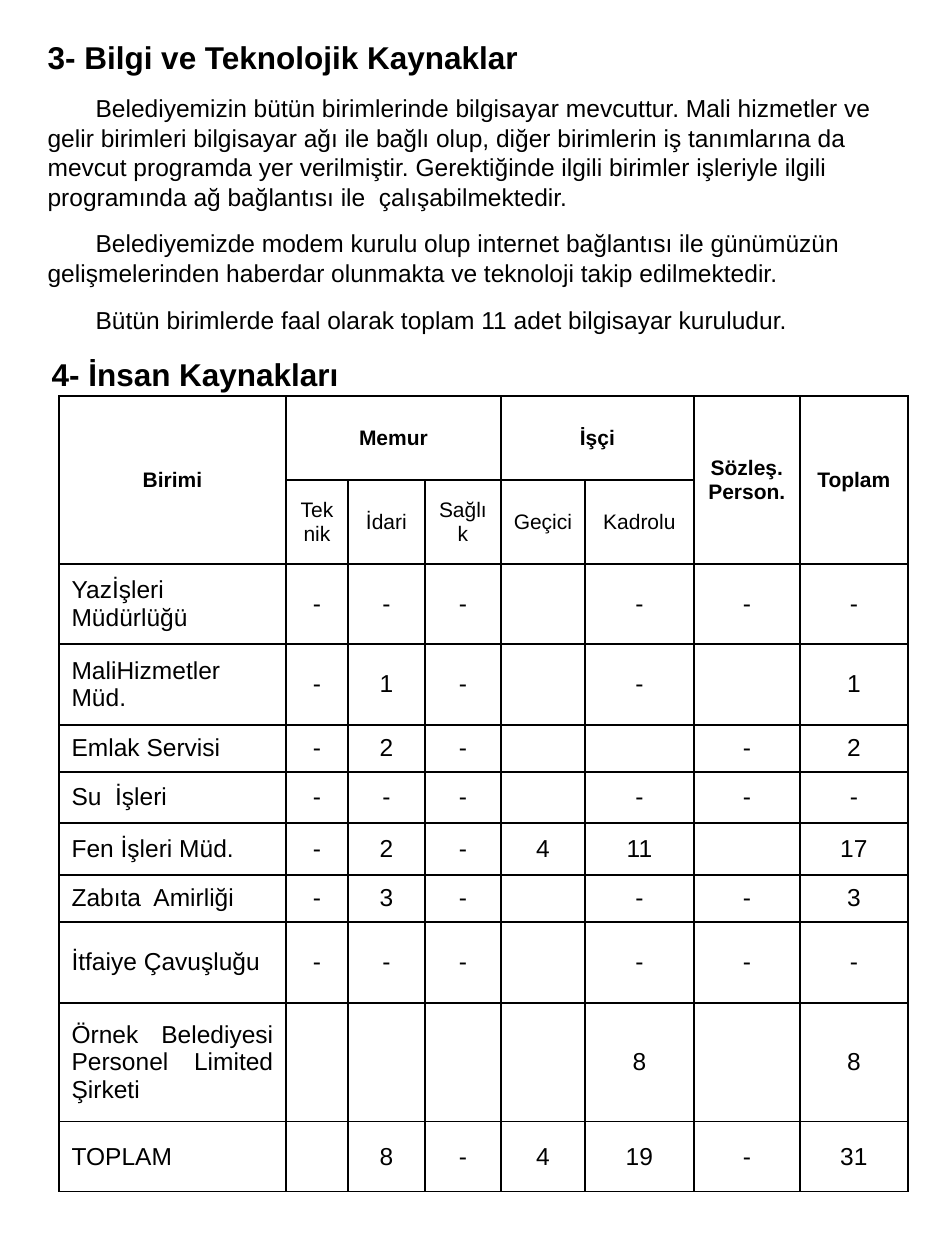
from lxml import etree
from pptx import Presentation
from pptx.dml.color import RGBColor
from pptx.enum.text import MSO_ANCHOR, MSO_AUTO_SIZE, PP_ALIGN
from pptx.oxml.ns import qn
from pptx.util import Pt

EMU_PER_PX = 914400 / 126
BLACK = RGBColor(0, 0, 0)
LEFT, CENTER, JUSTIFY = PP_ALIGN.LEFT, PP_ALIGN.CENTER, PP_ALIGN.JUSTIFY
TOP, MIDDLE = MSO_ANCHOR.TOP, MSO_ANCHOR.MIDDLE
NO_AUTOFIT = MSO_AUTO_SIZE.NONE

RESOURCES_HEADING = "3- Bilgi ve Teknolojik Kaynaklar"
STAFF_HEADING = "4- İnsan Kaynakları"
RESOURCES = [
    "Belediyemizin bütün birimlerinde bilgisayar mevcuttur. Mali hizmetler ve "
    "gelir birimleri bilgisayar ağı ile bağlı olup, diğer birimlerin iş tanımlarına da "
    "mevcut programda yer verilmiştir. Gerektiğinde ilgili birimler işleriyle ilgili "
    "programında ağ bağlantısı ile  çalışabilmektedir.",
    "Belediyemizde modem kurulu olup internet bağlantısı ile günümüzün "
    "gelişmelerinden haberdar olunmakta ve teknoloji takip edilmektedir.",
    "Bütün birimlerde faal olarak toplam 11 adet bilgisayar kuruludur.",
]

COLUMN_WIDTHS = [227, 62, 77, 76, 84, 109, 106, 108]
ROW_HEIGHTS = [84, 84, 80, 81, 47, 51, 52, 47, 81, 119, 70]
HEADER_MERGES = [(0, 0, 1, 0), (0, 1, 0, 3), (0, 4, 0, 5), (0, 6, 1, 6), (0, 7, 1, 7)]
STAFF = [
    ["Birimi", "Memur", "", "", "İşçi", "", "Sözleş.\nPerson.", "Toplam"],
    ["", "Teknik", "İdari", "Sağlık", "Geçici", "Kadrolu", "", ""],
    ["Yazİşleri Müdürlüğü", "-", "-", "-", "", "-", "-", "-"],
    ["MaliHizmetler Müd.", "-", "1", "-", "", "-", "", "1"],
    ["Emlak Servisi", "-", "2", "-", "", "", "-", "2"],
    ["Su  İşleri", "-", "-", "-", "", "-", "-", "-"],
    ["Fen İşleri Müd.", "-", "2", "-", "4", "11", "", "17"],
    ["Zabıta  Amirliği", "-", "3", "-", "", "-", "-", "3"],
    ["İtfaiye Çavuşluğu", "-", "-", "-", "", "-", "-", "-"],
    ["Örnek Belediyesi Personel Limited Şirketi", "", "", "", "", "8", "", "8"],
    ["TOPLAM", "", "8", "-", "4", "19", "-", "31"],
]


def px(length):
    return round(length * EMU_PER_PX)


class ReportPage:
    font_name = "Arial"
    heading_size = 18
    body_size = 14
    header_size = 12
    first_line_indent = 48
    paragraph_gap = 10

    def __init__(self, slide):
        self.slide = slide

    def style(self, paragraph, size, bold=False, alignment=LEFT):
        paragraph.alignment = alignment
        paragraph.font.name = self.font_name
        paragraph.font.size = Pt(size)
        paragraph.font.bold = bold
        paragraph.font.color.rgb = BLACK

    def plain(self, paragraph, indent=0, space_before=0):
        paragraph.line_spacing = 1.0
        paragraph.space_before = Pt(space_before)
        properties = paragraph._p.get_or_add_pPr()
        properties.set("marL", "0")
        properties.set("indent", str(px(indent)))
        bullet = etree.Element(qn("a:buNone"))
        properties.find(qn("a:spcBef")).addnext(bullet)

    def place(self, shape, left, top, width, height, margin_top):
        shape.left, shape.top = px(left), px(top)
        shape.width, shape.height = px(width), px(height)
        frame = shape.text_frame
        frame.word_wrap = True
        frame.auto_size = NO_AUTOFIT
        frame.vertical_anchor = TOP
        frame.margin_top = px(margin_top)
        return frame

    def title(self, text, *box, margin_top):
        frame = self.place(self.slide.shapes.title, *box, margin_top)
        frame.text = text
        self.plain(frame.paragraphs[0])
        self.style(frame.paragraphs[0], self.heading_size, bold=True)

    def body(self, heading, texts, *box, margin_top):
        frame = self.place(self.slide.placeholders[1], *box, margin_top)
        frame.text = "\n".join([heading, *texts])
        first, *rest = frame.paragraphs
        self.plain(first)
        self.style(first, self.heading_size, bold=True)
        for paragraph in rest:
            self.plain(paragraph, self.first_line_indent, self.paragraph_gap)
            self.style(paragraph, self.body_size)

    def border(self, cell):
        properties = cell._tc.get_or_add_tcPr()
        for side in ("lnL", "lnR", "lnT", "lnB"):
            line = etree.SubElement(properties, qn(f"a:{side}"), w=str(Pt(1)))
            fill = etree.SubElement(line, qn("a:solidFill"))
            etree.SubElement(fill, qn("a:srgbClr"), val=str(BLACK))

    def table(self, rows, left, top, widths, heights, merges):
        frame = self.slide.shapes.add_table(
            len(heights), len(widths), px(left), px(top), px(sum(widths)), px(sum(heights)))
        table = frame.table
        table.first_row = table.horz_banding = False
        for column, width in zip(table.columns, widths):
            column.width = px(width)
        for row, height in zip(table.rows, heights):
            row.height = px(height)
        for first_row, first_column, last_row, last_column in merges:
            table.cell(first_row, first_column).merge(table.cell(last_row, last_column))
        for row_index, row in enumerate(rows):
            is_header = row_index < 2
            size = self.header_size if is_header else self.body_size
            for column_index, text in enumerate(row):
                cell = table.cell(row_index, column_index)
                cell.text = text
                cell.vertical_anchor = MIDDLE
                cell.margin_top = cell.margin_bottom = px(4)
                self.border(cell)
                cell.fill.background()
                is_unit = column_index == 0 and not is_header
                for paragraph in cell.text_frame.paragraphs:
                    self.style(paragraph, size, row_index == 0, JUSTIFY if is_unit else CENTER)


def main():
    presentation = Presentation()
    presentation.slide_width, presentation.slide_height = px(945), px(1260)
    slide = presentation.slides.add_slide(presentation.slide_layouts[1])
    page = ReportPage(slide)
    page.body(RESOURCES_HEADING, RESOURCES, 35, 0, 883, 344, margin_top=38)
    page.title(STAFF_HEADING, 39, 344, 871, 39, margin_top=11)
    page.table(STAFF, 59, 396, COLUMN_WIDTHS, ROW_HEIGHTS, HEADER_MERGES)
    presentation.save("out.pptx")


if __name__ == "__main__":
    main()
